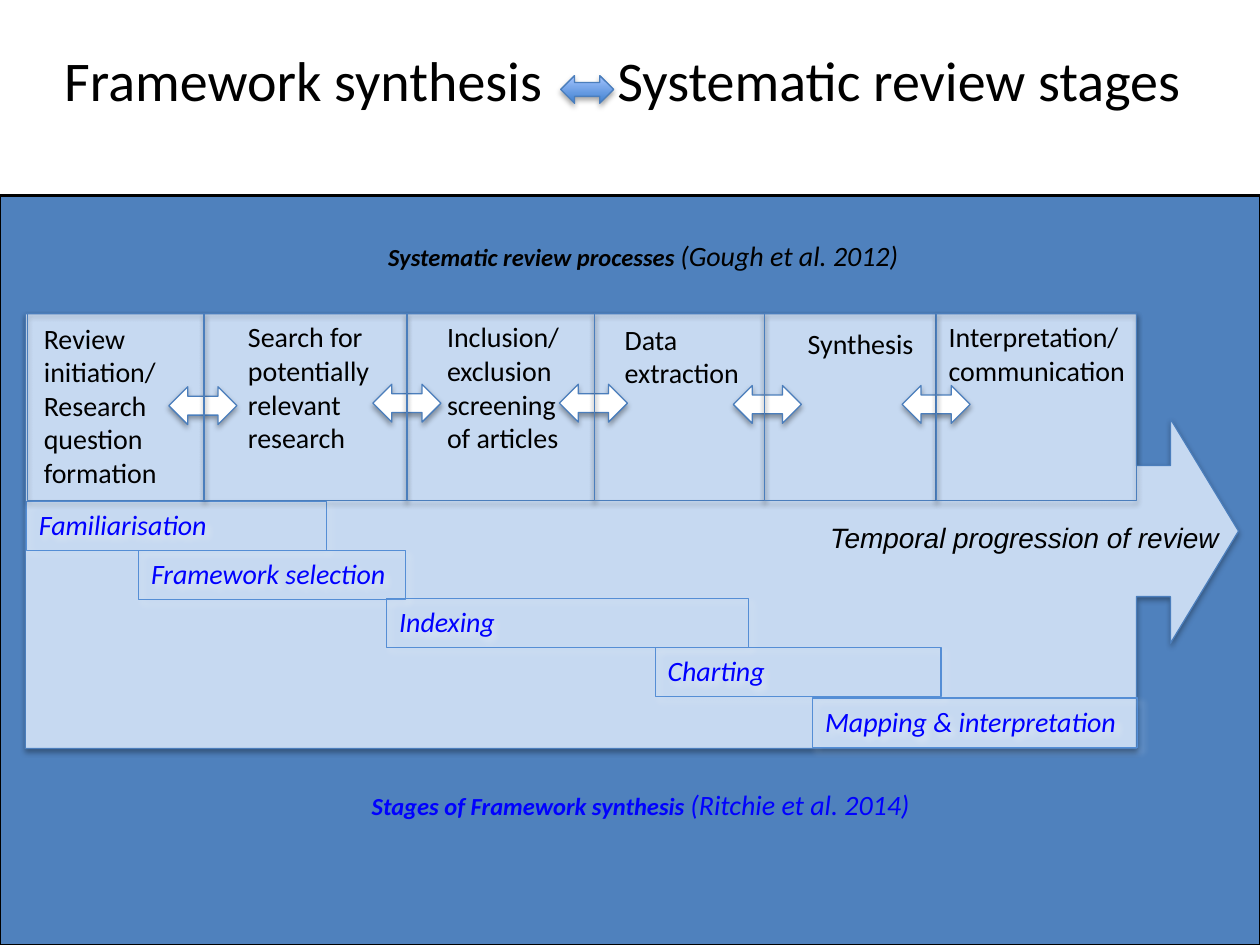
from dataclasses import dataclass

from lxml import etree
from pptx import Presentation
from pptx import util as u
from pptx.dml.color import RGBColor
from pptx.enum import shapes, text
from pptx.oxml import ns

PX = 9144  # EMU per px, 100 px to the inch
COLORS = {
    "black": "000000", "white": "FFFFFF", "backdrop": "4F81BD",
    "panel": "C6D9F1", "outline": "4B7EBC", "stage_line": "558ED5",
    "stage_text": "0000FF", "gradient_dark": "3F80CE", "gradient_light": "A4C4FF",
}
KIND = shapes.MSO_SHAPE
CENTER = text.PP_ALIGN.CENTER


@dataclass
class Box:
    left: int
    top: int
    width: int
    height: int

    def emu(self) -> list:
        return [u.Emu(n * PX) for n in (self.left, self.top, self.width, self.height)]


@dataclass
class Shadow:
    color: str
    alpha: int
    blur: float
    distance: float
    angle: int


@dataclass
class Run:
    words: str
    size: int = 16
    bold: bool = False
    italic: bool = False
    color: str = "black"
    font: str = "Calibri"


@dataclass
class Label:
    box: Box
    lines: list
    align: text.PP_ALIGN = text.PP_ALIGN.LEFT


DROP = Shadow("black", 35, 3.1, 1.8, 90)
GLOW = Shadow("white", 43, 4, 3, 45)


def rgb(name: str) -> RGBColor:
    return RGBColor.from_string(COLORS[name])


def add_shadow(shape, shadow: Shadow) -> None:
    effects = shape._element.spPr.find(ns.qn("a:effectLst"))
    outer = etree.SubElement(effects, ns.qn("a:outerShdw"), {
        "blurRad": str(int(u.Pt(shadow.blur))), "dist": str(int(u.Pt(shadow.distance))),
        "dir": str(shadow.angle * 60000), "rotWithShape": "0"})
    tint = etree.SubElement(outer, ns.qn("a:srgbClr"), val=COLORS[shadow.color])
    etree.SubElement(tint, ns.qn("a:alpha"), val=str(shadow.alpha * 1000))


def draw_shape(slide, kind, box: Box, fill: str = "", line: str = "outline",
               shadow: Shadow | None = None):
    shape = slide.shapes.add_shape(kind, *box.emu())
    shape.shadow.inherit = False
    if fill:
        shape.fill.solid()
        shape.fill.fore_color.rgb = rgb(fill)
    else:
        shape.fill.background()
    if line:
        shape.line.color.rgb = rgb(line)
        shape.line.width = u.Pt(0.75)
    else:
        shape.line.fill.background()
    if shadow:
        add_shadow(shape, shadow)
    return shape


def write(shape, label: Label, anchor=text.MSO_ANCHOR.TOP) -> None:
    frame = shape.text_frame
    frame.word_wrap = True
    frame.vertical_anchor = anchor
    for index, runs in enumerate(label.lines):
        paragraph = frame.add_paragraph() if index else frame.paragraphs[0]
        paragraph.alignment = label.align
        for part in runs:
            run = paragraph.add_run()
            run.text = part.words
            style = {"name": part.font, "size": u.Pt(part.size),
                     "bold": part.bold, "italic": part.italic}
            for attribute, value in style.items():
                setattr(run.font, attribute, value)
            run.font.color.rgb = rgb(part.color)


def draw_label(slide, label: Label, anchor=text.MSO_ANCHOR.TOP):
    area = slide.shapes.add_textbox(*label.box.emu())
    write(area, label, anchor)
    return area


def heading(box: Box, topic: str, source: str, color: str) -> Label:
    return Label(box, [[Run(topic, 14, True, True, color),
                        Run(source, 16, False, True, color)]], CENTER)


HEADINGS = [
    heading(Box(251, 184, 519, 42), "Systematic review processes ",
            "(Gough et al. 2012)", "black"),
    heading(Box(210, 620, 597, 42), "Stages of Framework synthesis ",
            "(Ritchie et al. 2014)", "stage_text"),
]
FIRST_PROCESS = Label(Box(25, 250, 136, 151),
                      [[Run("Review initiation/ Research question formation")]])
PROCESSES = [
    Label(Box(187, 249, 153, 123), [[Run("Search for potentially relevant research")]]),
    Label(Box(345, 249, 113, 123),
          [[Run("Inclusion/ exclusion screening")], [Run("of articles")]]),
    Label(Box(486, 251, 137, 67), [[Run("Data extraction")]]),
    Label(Box(623, 254, 120, 39), [[Run("Synthesis")]], CENTER),
    Label(Box(743, 249, 168, 67), [[Run("Interpretation/ communication")]]),
]
PROGRESSION = Label(Box(642, 408, 342, 39),
                    [[Run("Temporal progression of review", italic=True, font="Arial")]],
                    CENTER)
STAGES = [  # name, left, top, width
    ("Familiarisation", 21, 398, 238),
    ("Framework selection", 110, 437, 212),
    ("Indexing", 307, 475, 287),
    ("Charting", 520, 514, 227),
    ("Mapping & interpretation", 645, 554, 258),
]
PROCESS_EDGES = [22, 162, 323, 472, 607, 743, 902]
LINKS = [(134, 307), (296, 305), (444, 305), (582, 306), (716, 306)]


def draw_title(slide) -> None:
    title = Label(Box(0, 0, 1000, 125),
                  [[Run("Framework synthesis\tSystematic review stages", 32)]])
    area = draw_label(slide, title, text.MSO_ANCHOR.MIDDLE)
    area.text_frame.margin_left = u.Emu(51 * PX)
    # The tab leaves room for the arrow between the two halves
    properties = area.text_frame.paragraphs[0]._p.get_or_add_pPr()
    stops = etree.SubElement(properties, ns.qn("a:tabLst"))
    etree.SubElement(stops, ns.qn("a:tab"), pos=str(439 * PX), algn="l")

    arrow = draw_shape(slide, KIND.LEFT_RIGHT_ARROW, Box(445, 60, 42, 22),
                       "white", shadow=DROP)
    arrow.fill.gradient()
    arrow.fill.gradient_angle = 90
    ends = ("gradient_dark", "gradient_light")
    for stop, position, color in zip(arrow.fill.gradient_stops, (0, 1), ends):
        stop.position = position
        stop.color.rgb = rgb(color)


def main() -> None:
    deck = Presentation()
    deck.slide_width, deck.slide_height = u.Emu(1000 * PX), u.Emu(750 * PX)
    slide = deck.slides.add_slide(deck.slide_layouts[6])

    # Backdrop and its top rule
    draw_shape(slide, KIND.RECTANGLE, Box(0, 155, 1000, 595), "backdrop", "black")
    rule = slide.shapes.add_connector(shapes.MSO_CONNECTOR.STRAIGHT,
                                      0, 155 * PX, 1000 * PX, 155 * PX)
    rule.line.color.rgb = rgb("black")
    rule.line.width = u.Pt(2)
    etree.SubElement(rule._element.spPr, ns.qn("a:effectLst"))

    # Callout arrow: shaft, half head and head length against height, body against width
    timeline = Box(20, 249, 963, 345)
    callout = draw_shape(slide, KIND.RIGHT_ARROW_CALLOUT, timeline, "panel", shadow=DROP)
    ratios = [n / timeline.height for n in (104, 89, 54)] + [882 / timeline.width]
    for index, ratio in enumerate(ratios):
        callout.adjustments[index] = ratio

    # Process texts
    first = draw_shape(slide, KIND.RECTANGLE, FIRST_PROCESS.box, "panel", "")
    write(first, FIRST_PROCESS)
    for label in HEADINGS + PROCESSES:
        draw_label(slide, label)

    # Framework synthesis stages
    for name, left, top, width in STAGES:
        box = Box(left, top, width, 39)
        bar = draw_shape(slide, KIND.RECTANGLE, box, line="stage_line", shadow=GLOW)
        write(bar, Label(box, [[Run(name, italic=True, color="stage_text")]]))

    # Links between processes, then the process frames
    for left, top in LINKS:
        draw_shape(slide, KIND.LEFT_RIGHT_ARROW, Box(left, top, 54, 30),
                   "white", shadow=DROP)
    for left, right in zip(PROCESS_EDGES, PROCESS_EDGES[1:]):
        draw_shape(slide, KIND.RECTANGLE, Box(left, 249, right - left, 148), shadow=DROP)

    draw_label(slide, PROGRESSION)
    draw_title(slide)
    deck.save("out.pptx")


if __name__ == "__main__":
    main()
